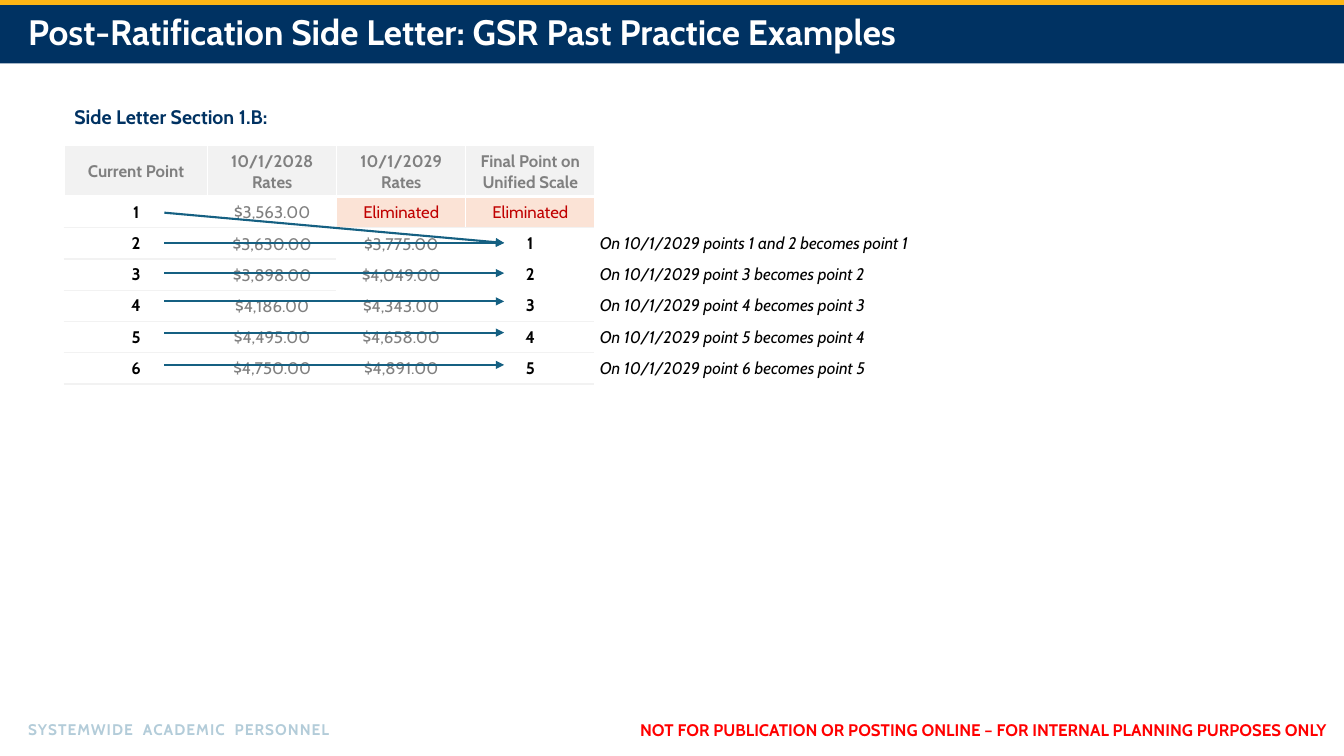
from lxml import etree
from pptx import Presentation
from pptx import util as u
from pptx.dml.color import RGBColor
from pptx.enum import shapes, text
from pptx.oxml.ns import qn

FONT = "Cabin"
NAVY, GOLD, TEAL, PALE_BLUE = "003262", "FDB515", "156082", "B3CCD9"
GREY, PALE, WHITE, BLACK = "808080", "F2F2F2", "FFFFFF", "000000"
RED, DARK_RED, PEACH = "FF0000", "C00000", "FBE3D6"

HEADINGS = ["Current Point", "10/1/2028 Rates", "10/1/2029 Rates",
            "Final Point on Unified Scale", ""]
RATES = [
    ["1", "$3,563.00", "Eliminated", "Eliminated", ""],
    ["2", "$3,630.00", "$3,775.00", "1", "On 10/1/2029 points 1 and 2 becomes point 1"],
    ["3", "$3,898.00", "$4,049.00", "2", "On 10/1/2029 point 3 becomes point 2"],
    ["4", "$4,186.00", "$4,343.00", "3", "On 10/1/2029 point 4 becomes point 3"],
    ["5", "$4,495.00", "$4,658.00", "4", "On 10/1/2029 point 5 becomes point 4"],
    ["6", "$4,750.00", "$4,891.00", "5", "On 10/1/2029 point 6 becomes point 5"],
]
COLUMN_WIDTHS = [1.42, 1.28, 1.28, 1.28, 6.5]
HEADER_HEIGHT, ROW_HEIGHT = 0.5, 0.31
NOTE = 4
# Start and end height of each arrow, measured from the top of the table
ARROWS = [(0.66, 0.96), (0.96, 0.96), (1.26, 1.26), (1.54, 1.54),
          (1.85, 1.85), (2.17, 2.17)]


def rgb(value):
    return RGBColor.from_string(value)


def write(frame, words, size=12, color=BLACK, bold=False, italic=False,
          align=text.PP_ALIGN.LEFT, line_spacing=None, tracking=None):
    """Put formatted words into the first paragraph of a text frame."""
    paragraph = frame.paragraphs[0]
    paragraph.alignment = align
    if line_spacing:
        paragraph.line_spacing = line_spacing
    if not words:
        paragraph._p.get_or_add_endParaRPr().set("sz", str(size * 100))
        return
    run = paragraph.add_run()
    run.text = words
    font = run.font
    font.name, font.size, font.bold, font.italic = FONT, u.Pt(size), bold, italic
    font.color.rgb = rgb(color)
    if tracking:
        run._r.get_or_add_rPr().set("spc", str(int(tracking * 100)))


def add_label(slide, box, words, wrap=False, anchor=text.MSO_ANCHOR.TOP, **style):
    frame = slide.shapes.add_textbox(*map(u.Inches, box)).text_frame
    frame.word_wrap = wrap
    frame.vertical_anchor = anchor
    write(frame, words, **style)


def add_band(slide, box, color):
    band = slide.shapes.add_shape(shapes.MSO_SHAPE.RECTANGLE, *map(u.Inches, box))
    band.shadow.inherit = False
    band.fill.solid()
    band.fill.fore_color.rgb = rgb(color)
    band.line.fill.background()


def add_header(slide, left, top, width, height):
    stripe = 0.05
    add_band(slide, (left, top, width, stripe), GOLD)
    add_band(slide, (left, top + stripe, width, height - stripe), NAVY)
    add_label(slide, (left + 0.18, top + 0.13, 11.5, 0.42),
              "Post-Ratification Side Letter: GSR Past Practice Examples",
              wrap=True, anchor=text.MSO_ANCHOR.MIDDLE,
              size=25.2, color=WHITE, bold=True, line_spacing=0.9)


def add_footer(slide, left, top, width, height):
    add_label(slide, (left + 0.18, top, 3.24, height),
              "SYSTEMWIDE  ACADEMIC  PERSONNEL",
              size=11, color=PALE_BLUE, bold=True, tracking=0.7)
    warning_width = 7.08
    add_label(slide, (left + width - warning_width, top, warning_width, height),
              "NOT FOR PUBLICATION OR POSTING ONLINE – FOR INTERNAL PLANNING PURPOSES ONLY",
              color=RED, bold=True)


def set_borders(cell, **sides):
    """Draw cell edges; each side is a (colour, points) pair."""
    properties = cell._tc.get_or_add_tcPr()
    for index, side in enumerate(("lnL", "lnR", "lnT", "lnB")):
        color, points = sides[side]
        edge = etree.Element(qn("a:" + side), w=str(u.Pt(points)))
        fill = etree.SubElement(edge, qn("a:solidFill"))
        etree.SubElement(fill, qn("a:srgbClr")).set("val", color)
        properties.insert(index, edge)


def rule_below(row, column):
    """Edge under a row; row -1 is the top of the table."""
    if column == NOTE:
        return WHITE, 1
    if row == 0:
        return WHITE, 3
    if row in (2, 3) and column in (2, 3):
        return WHITE, 1
    return PALE, 1


def cell_style(row, column, words):
    """Return the fill and the text format of a cell."""
    center = text.PP_ALIGN.CENTER
    if column == NOTE:
        return None, dict(italic=True)
    if row == 0:
        return PALE, dict(color=GREY, bold=True, align=center)
    if words == "Eliminated":
        return PEACH, dict(color=DARK_RED, align=center)
    if words.startswith("$"):
        return None, dict(color=GREY, align=center)
    return None, dict(bold=True, align=center)


def add_rates_table(slide, left, top):
    grid = [HEADINGS] + RATES
    height = HEADER_HEIGHT + ROW_HEIGHT * len(RATES)
    table = slide.shapes.add_table(
        len(grid), len(HEADINGS),
        *map(u.Inches, (left, top, sum(COLUMN_WIDTHS), height))).table
    table.first_row = table.horz_banding = False
    for column, width in zip(table.columns, COLUMN_WIDTHS):
        column.width = u.Inches(width)
    for r, line in enumerate(grid):
        table.rows[r].height = u.Inches(ROW_HEIGHT if r else HEADER_HEIGHT)
        for c, words in enumerate(line):
            cell = table.cell(r, c)
            fill, style = cell_style(r, c, words)
            is_rate = r > 0 and c in (1, 2)
            margin = u.Inches(0.01 if is_rate else 0.05)
            cell.margin_left = cell.margin_right = cell.margin_top = margin
            cell.margin_bottom = 0 if is_rate else margin
            cell.vertical_anchor = text.MSO_ANCHOR.MIDDLE
            if fill:
                cell.fill.solid()
                cell.fill.fore_color.rgb = rgb(fill)
            else:
                cell.fill.background()
            write(cell.text_frame, words, **style)
            set_borders(cell, lnL=(WHITE, 1), lnR=(WHITE, 1),
                        lnT=rule_below(r - 1, c), lnB=rule_below(r, c))


def add_arrow(slide, x1, y1, x2, y2):
    arrow = slide.shapes.add_connector(
        shapes.MSO_CONNECTOR.STRAIGHT, *map(u.Inches, (x1, y1, x2, y2)))
    arrow.line.color.rgb = rgb(TEAL)
    arrow.line.width = u.Pt(1.5)
    etree.SubElement(arrow.line._get_or_add_ln(), qn("a:tailEnd")).set("type", "triangle")
    etree.SubElement(arrow._element.spPr, qn("a:effectLst"))


def add_section(slide, left, top):
    add_label(slide, (left, top, 2.27, 0.34), "Side Letter Section 1.B:",
              size=14, color=NAVY, bold=True)
    table_top = top + 0.46
    add_rates_table(slide, left, table_top)
    # Arrows from the current point to the final point
    for start, end in ARROWS:
        add_arrow(slide, left + 0.99, table_top + start, left + 4.36, table_top + end)


def main():
    deck = Presentation()
    deck.slide_width, deck.slide_height = u.Inches(13.33), u.Inches(7.5)
    slide = deck.slides.add_slide(deck.slide_layouts[6])
    add_header(slide, 0, 0, 13.33, 0.63)
    add_footer(slide, 0, 7.09, 13.33, 0.3)
    add_section(slide, 0.64, 0.99)
    deck.save("out.pptx")


if __name__ == "__main__":
    main()
